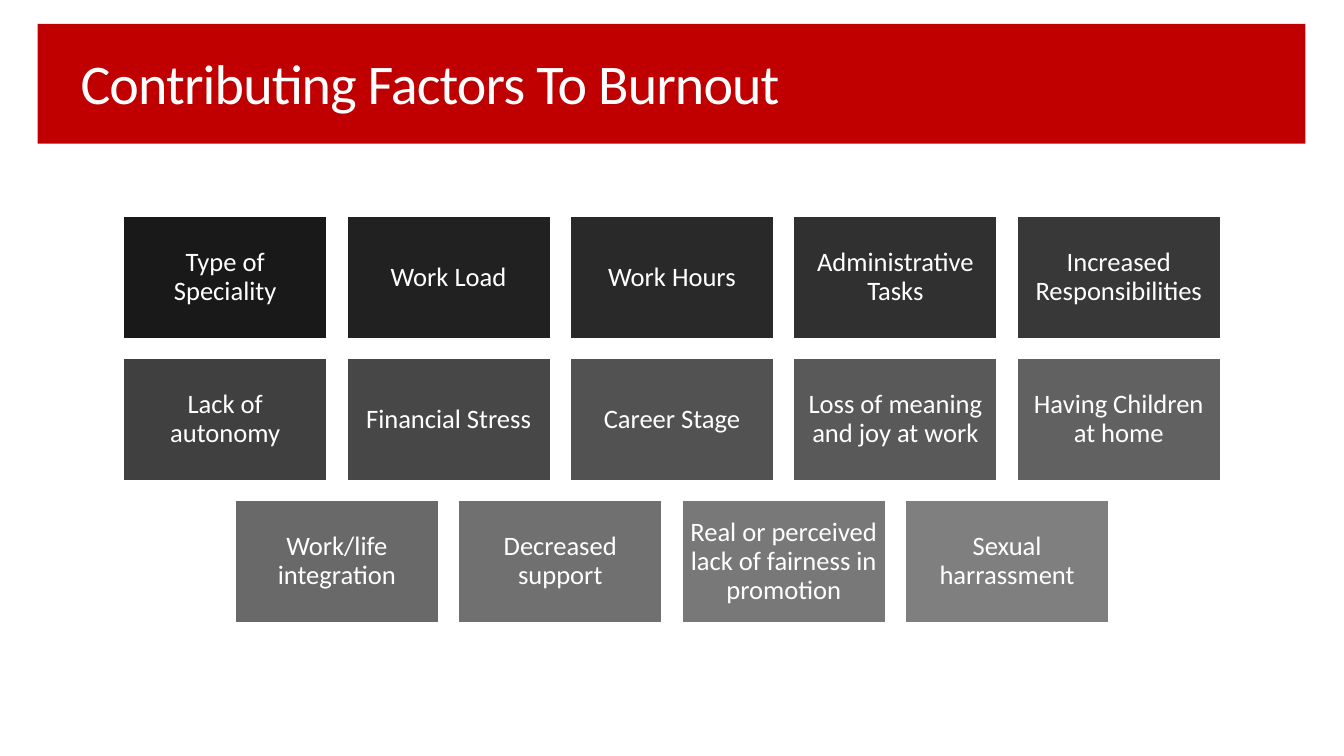
from lxml.etree import SubElement
from pptx import Presentation
from pptx.dml.color import RGBColor
from pptx.enum.shapes import MSO_SHAPE
from pptx.enum.text import MSO_ANCHOR, PP_ALIGN
from pptx.oxml.ns import qn
from pptx.util import Cm, Pt

SLIDE_W, SLIDE_H = 33.87, 19.05
CARD_W, CARD_H, GAP = 5.12, 3.07, 0.51
CARDS_TOP = 5.46
FIRST_OPACITY, LAST_OPACITY = 90, 50

FACTOR_ROWS = [
    ["Type of Speciality", "Work Load", "Work Hours",
     "Administrative Tasks", "Increased Responsibilities"],
    ["Lack of autonomy", "Financial Stress", "Career Stage",
     "Loss of meaning and joy at work", "Having Children at home"],
    ["Work/life integration", "Decreased support",
     "Real or perceived lack of fairness in promotion", "Sexual harrassment"],
]


def color(value):
    return RGBColor.from_string(value)


def write(s, text, size, align=PP_ALIGN.LEFT, inset=(0.25, 0.13), spacing=None):
    """Fill a shape with one white paragraph; spacing is in 1/100 pt."""
    tf = s.text_frame
    tf.word_wrap = True
    tf.vertical_anchor = MSO_ANCHOR.MIDDLE
    tf.margin_left = tf.margin_right = Cm(inset[0])
    tf.margin_top = tf.margin_bottom = Cm(inset[1])
    p = tf.paragraphs[0]
    p.alignment = align
    p.line_spacing = 0.9
    r = p.add_run()
    r.text = text
    r.font.name = "Calibri"
    r.font.size = Pt(size)
    r.font.color.rgb = color("FFFFFF")
    if spacing is not None:
        r.font._element.set("spc", str(spacing))


class Deck:
    def __init__(self):
        self.prs = Presentation()
        self.prs.slide_width, self.prs.slide_height = Cm(SLIDE_W), Cm(SLIDE_H)
        self.slide = self.prs.slides.add_slide(self.prs.slide_layouts[6])

    def rectangle(self, x, y, w, h, fill, opacity=100, line=None):
        s = self.slide.shapes.add_shape(
            MSO_SHAPE.RECTANGLE, Cm(x), Cm(y), Cm(w), Cm(h))
        s.shadow.inherit = False
        s.fill.solid()
        s.fill.fore_color.rgb = color(fill)
        if opacity < 100:
            srgb = s._element.spPr.find(qn("a:solidFill")).find(qn("a:srgbClr"))
            SubElement(srgb, qn("a:alpha"), val=str(opacity * 1000))
        if line:
            s.line.color.rgb = color(line)
            s.line.width = Pt(0.85)
        else:
            s.line.fill.background()
        return s

    def title(self, text):
        self.rectangle(0.95, 0.6, 31.95, 3.02, "C00000")
        s = self.slide.shapes.add_textbox(Cm(1.78), Cm(0), Cm(27), Cm(4.37))
        write(s, text, 40, spacing=-60)

    def card(self, x, y, text, opacity):
        s = self.rectangle(x, y, CARD_W, CARD_H, "000000", opacity, "FFFFFF")
        write(s, text, 19, PP_ALIGN.CENTER, inset=(0.2, 0.2))

    def card_grid(self, rows):
        """Centre each row of cards and fade them evenly from first to last."""
        step = (FIRST_OPACITY - LAST_OPACITY) / (sum(map(len, rows)) - 1)
        index = 0
        for i, row in enumerate(rows):
            left = (SLIDE_W - len(row) * (CARD_W + GAP) + GAP) / 2
            for j, text in enumerate(row):
                self.card(left + j * (CARD_W + GAP),
                          CARDS_TOP + i * (CARD_H + GAP),
                          text, round(FIRST_OPACITY - index * step))
                index += 1


def main():
    deck = Deck()
    deck.title("Contributing Factors To Burnout")
    deck.card_grid(FACTOR_ROWS)
    deck.prs.save("out.pptx")


if __name__ == "__main__":
    main()
